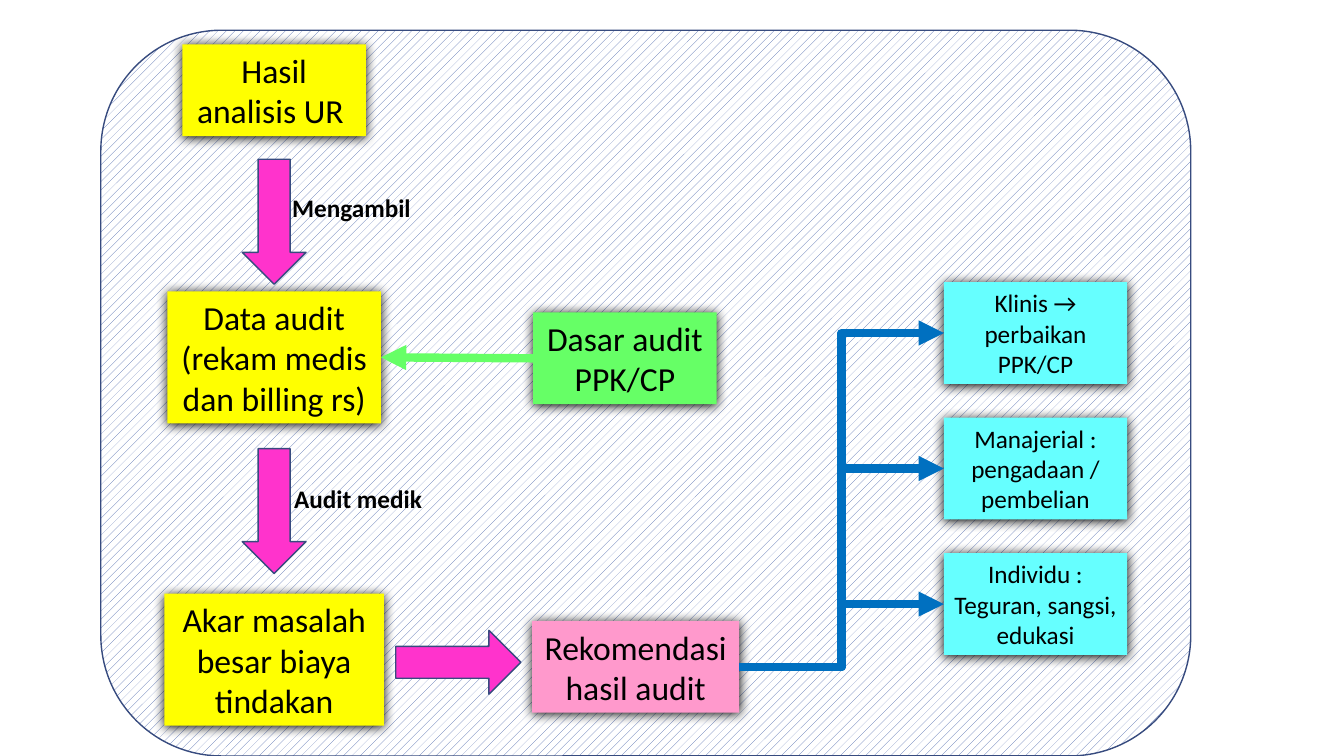
"""Draw the medical audit flow from utilisation review to recommendations."""
from lxml import etree
from pptx import Presentation, util as u
from pptx.dml.color import RGBColor
from pptx.enum import dml, shapes, text
from pptx.oxml.ns import qn

BLACK = RGBColor(0x00, 0x00, 0x00)
WHITE = RGBColor(0xFF, 0xFF, 0xFF)
HATCH = RGBColor(0x4A, 0x66, 0xAC)
OUTLINE = RGBColor(0x37, 0x4B, 0x7F)
YELLOW = RGBColor(0xFF, 0xFF, 0x00)
PINK = RGBColor(0xFF, 0x99, 0xCC)
MAGENTA = RGBColor(0xFF, 0x33, 0xCC)
GREEN = RGBColor(0x66, 0xFF, 0x66)
CYAN = RGBColor(0x66, 0xFF, 0xFF)
BLUE = RGBColor(0x00, 0x70, 0xC0)


def write(frame, wording, size=24, bold=False, align=text.PP_ALIGN.CENTER, wrap=True):
    """Fill a text frame, one paragraph per line of wording."""
    frame.word_wrap = wrap
    frame.auto_size = text.MSO_AUTO_SIZE.SHAPE_TO_FIT_TEXT
    for index, line in enumerate(wording.split("\n")):
        paragraph = frame.paragraphs[0] if index == 0 else frame.add_paragraph()
        paragraph.alignment = align
        run = paragraph.add_run()
        run.text = line
        run.font.name, run.font.size, run.font.bold = "Calibri", u.Pt(size), bold
        run.font.color.rgb = BLACK


class FlowSlide:
    """Place elements by percentages of the slide's width and height."""

    def __init__(self, deck):
        self.width, self.height = deck.slide_width, deck.slide_height
        self.shapes = deck.slides.add_slide(deck.slide_layouts[6]).shapes

    def area(self, x, y, w, h):
        """Turn percentages into lengths."""
        return [round(share * side / 100) for share, side in
                zip((x, y, w, h), (self.width, self.height) * 2)]

    def centred(self, preset, cx, cy, w, h, fill):
        """Add a filled preset shape around a centre point."""
        shape = self.shapes.add_shape(preset, *self.area(cx - w / 2, cy - h / 2, w, h))
        shape.shadow.inherit = False
        shape.fill.solid()
        shape.fill.fore_color.rgb = fill
        shape.line.color.rgb, shape.line.width = OUTLINE, u.Pt(1)
        return shape

    def panel(self, x, y, w, h):
        """Add the hatched rounded background."""
        panel = self.centred(shapes.MSO_SHAPE.ROUNDED_RECTANGLE,
                             x + w / 2, y + h / 2, w, h, WHITE)
        panel.fill.patterned()
        panel.fill.pattern = dml.MSO_PATTERN.PERCENT_20
        panel.fill.fore_color.rgb, panel.fill.back_color.rgb = HATCH, WHITE

    def box(self, wording, cx, cy, w, h, fill, size=24):
        """Add a shadowed box with centred text."""
        box = self.centred(shapes.MSO_SHAPE.RECTANGLE, cx, cy, w, h, fill)
        box.line.fill.background()
        effects = box._element.spPr.find(qn("a:effectLst"))
        shadow = etree.SubElement(effects, qn("a:outerShdw"), blurRad=str(u.Pt(8.5)),
                                  dist=str(u.Pt(1)), dir="5400000",
                                  algn="t", rotWithShape="0")
        etree.SubElement(shadow, qn("a:srgbClr"), val=str(BLACK))
        write(box.text_frame, wording, size=size)
        return box

    def arrow(self, cx, cy, rotation=0):
        """Add a block arrow, pointing down unless rotated."""
        arrow = self.centred(shapes.MSO_SHAPE.DOWN_ARROW, cx, cy, 4.75, 16.53, MAGENTA)
        arrow.rotation = rotation

    def label(self, wording, x, y, w):
        """Add a bold caption beside an arrow."""
        label = self.shapes.add_textbox(*self.area(x, y, w, 5.38))
        write(label.text_frame, wording, size=18, bold=True,
              align=text.PP_ALIGN.LEFT, wrap=False)

    def link(self, kind, source, source_side, target, target_side, color):
        """Join two boxes with a thick arrow."""
        link = self.shapes.add_connector(kind, 0, 0, 0, 0)
        link.begin_connect(source, source_side)
        link.end_connect(target, target_side)
        link.line.color.rgb, link.line.width = color, u.Pt(6)
        etree.SubElement(link.line._get_or_add_ln(), qn("a:tailEnd"), type="triangle")
        etree.SubElement(link._element.spPr, qn("a:effectLst"))


def main():
    """Build and save the slide."""
    deck = Presentation()
    deck.slide_width, deck.slide_height = u.Inches(13.33), u.Inches(7.5)
    flow = FlowSlide(deck)
    steps = 20.4
    flow.panel(7.5, 4, 81.1, 96)

    flow.box("Hasil analisis UR ", steps, 11.93, 13.65, 12.13, YELLOW)
    data = flow.box("Data audit (rekam medis dan billing rs)",
                    steps, 47.27, 15.9, 17.47, YELLOW)
    advice = flow.box("Rekomendasi hasil audit", 47.3, 88.2, 15.4, 12.13, PINK)
    flow.box("Akar masalah besar biaya tindakan", steps, 87.27, 16.35, 17.47, YELLOW)

    for caption, middle, x, y, w in (("Mengambil", 29.33, 21, 24.8, 10.8),
                                     ("Audit medik", 67.6, 21.15, 63.33, 11.1)):
        flow.arrow(steps, middle)
        flow.label(caption, x, y, w)
    flow.arrow(34.1, 87.6, rotation=270)

    basis = flow.box("Dasar audit\nPPK/CP", 46.5, 47.4, 13.65, 12.13, GREEN)
    outcomes = ("Klinis → perbaikan PPK/CP",
                "Manajerial : pengadaan / pembelian",
                "Individu :\nTeguran, sangsi, edukasi")
    for row, wording in enumerate(outcomes):
        outcome = flow.box(wording, 77.05, 44.05 + 17.93 * row, 13.65, 13.47, CYAN, size=18)
        flow.link(shapes.MSO_CONNECTOR.ELBOW, advice, 3, outcome, 1, BLUE)
    flow.link(shapes.MSO_CONNECTOR.STRAIGHT, basis, 1, data, 3, GREEN)
    deck.save("out.pptx")


if __name__ == "__main__":
    main()
